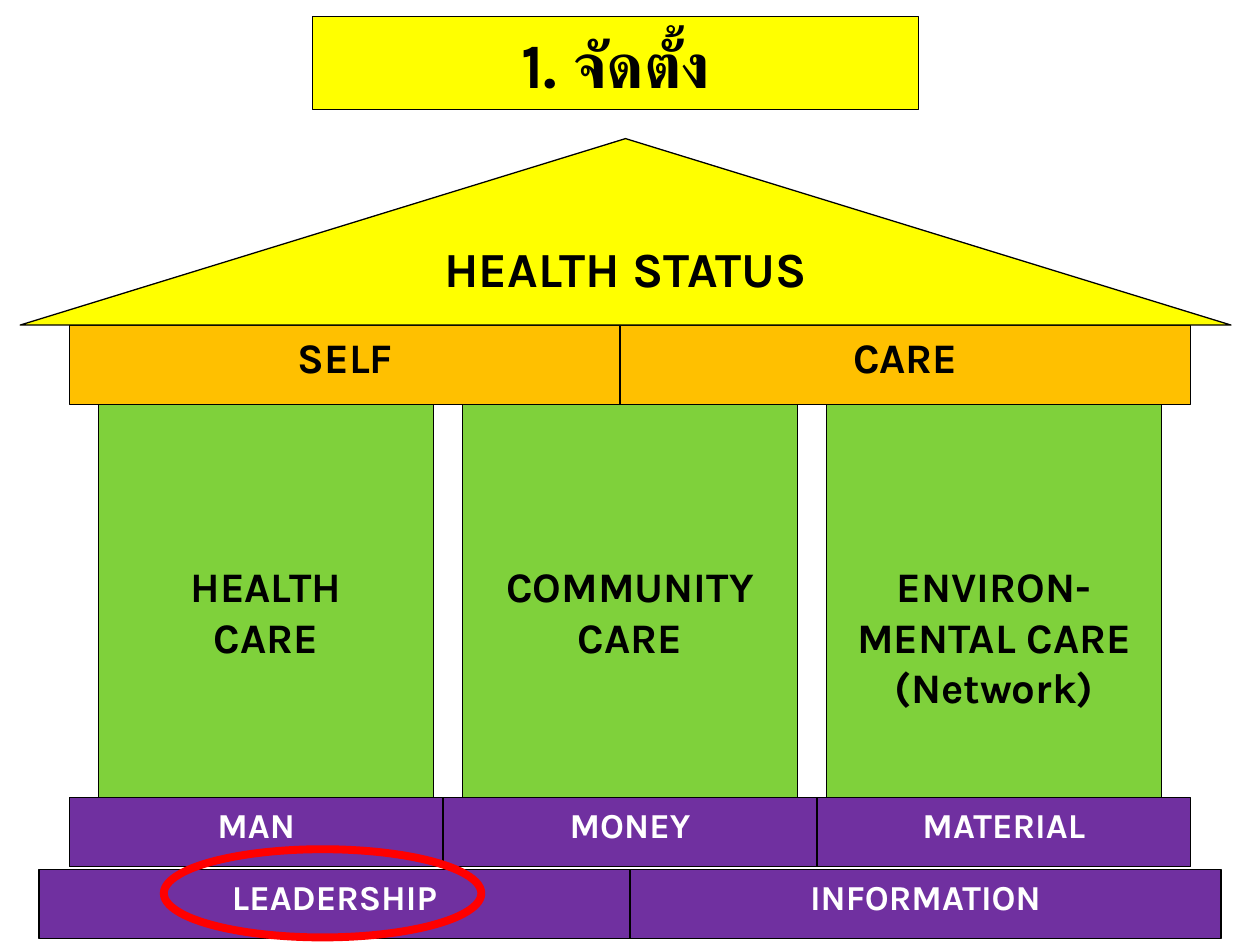
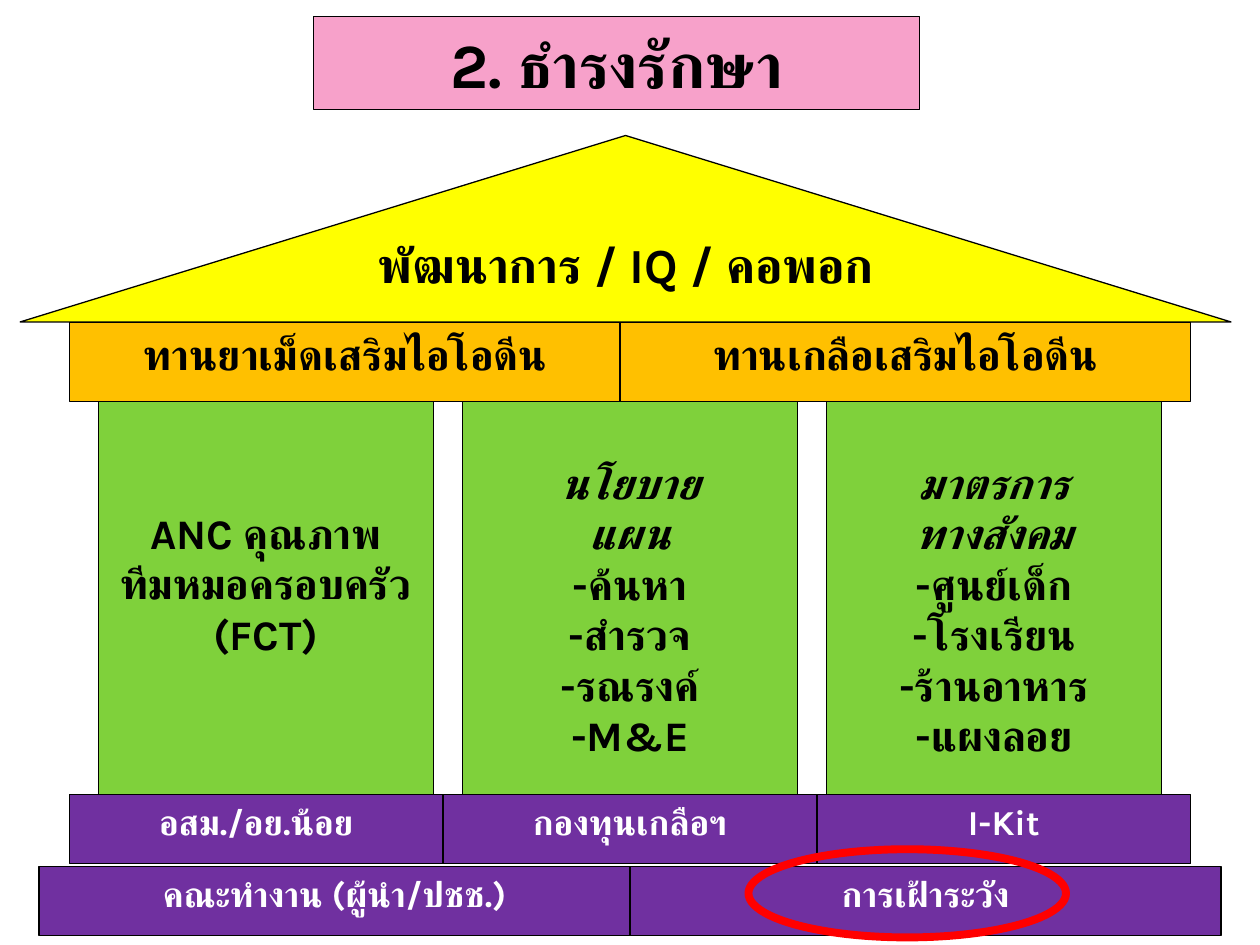
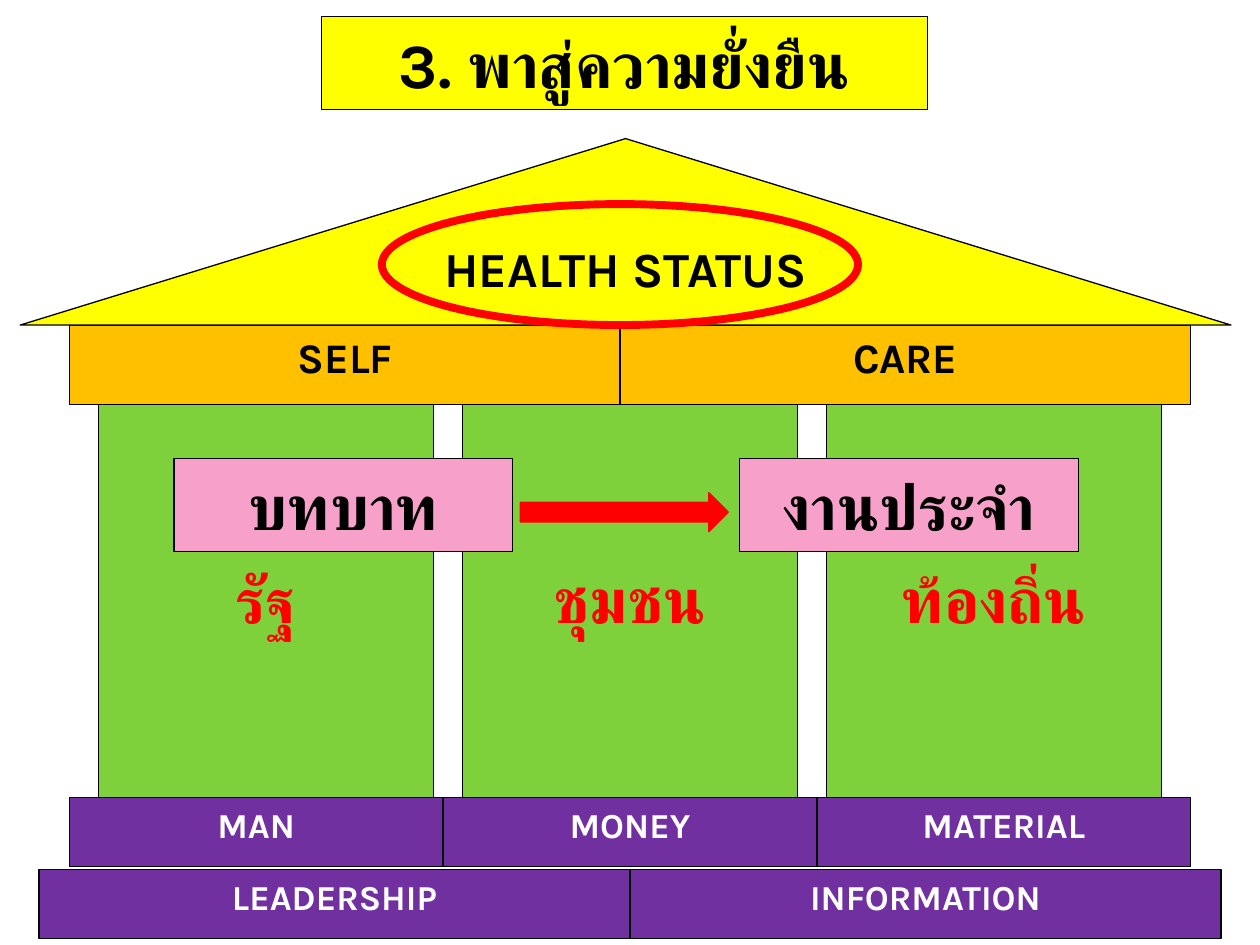
from lxml.etree import SubElement
from pptx import Presentation
from pptx.dml.color import RGBColor
from pptx.enum.shapes import MSO_SHAPE
from pptx.enum.text import MSO_ANCHOR, PP_ALIGN
from pptx.oxml.ns import qn
from pptx.util import Inches, Pt

BLACK = RGBColor(0x00, 0x00, 0x00)
WHITE = RGBColor(0xFF, 0xFF, 0xFF)
YELLOW = RGBColor(0xFF, 0xFF, 0x00)
AMBER = RGBColor(0xFF, 0xC0, 0x00)
GREEN = RGBColor(0x7F, 0xD1, 0x3B)
PURPLE = RGBColor(0x70, 0x30, 0xA0)
PINK = RGBColor(0xF7, 0xA1, 0xCA)
RED = RGBColor(0xFF, 0x00, 0x00)

FONT = "Karla"
LINE_HEIGHT = 1.19
COLUMNS, ROWS = 100, 75

ENGLISH_HOUSE = {
    "roof": "HEALTH STATUS",
    "beams": ["SELF", "CARE"],
    "base": ["MAN", "MONEY", "MATERIAL"],
    "ground": ["LEADERSHIP", "INFORMATION"],
}


class HouseDeck:
    """Draws on a grid of 100 columns by 75 rows."""

    def __init__(self):
        self.deck = Presentation()
        self.deck.slide_width, self.deck.slide_height = Inches(10), Inches(7.5)
        self.column = self.deck.slide_width / COLUMNS
        self.row = self.deck.slide_height / ROWS
        self.page = None

    def add_page(self):
        self.page = self.deck.slides.add_slide(self.deck.slide_layouts[6])

    def shape(self, kind, left, top, width, height, fill=None, line=BLACK, weight=0.75):
        box = self.page.shapes.add_shape(
            kind, round(left * self.column), round(top * self.row),
            round(width * self.column), round(height * self.row))
        box.shadow.inherit = False
        if fill is None:
            box.fill.background()
        else:
            box.fill.solid()
            box.fill.fore_color.rgb = fill
        box.line.color.rgb = line
        box.line.width = Pt(weight)
        return box

    def set_text(self, box, lines, size, color=BLACK, anchor=MSO_ANCHOR.TOP, skip=0, slanted=0):
        """Leave `skip` lines free at the top; set the first `slanted` lines in italics."""
        frame = box.text_frame
        frame.word_wrap = True
        frame.vertical_anchor = anchor
        frame.margin_top = Inches(0.05) + Pt(skip * size * LINE_HEIGHT)
        for index, line in enumerate(lines):
            para = frame.paragraphs[0] if index == 0 else frame.add_paragraph()
            para.text = line
            para.alignment = PP_ALIGN.CENTER
            font = para.font
            font.size, font.bold, font.italic = Pt(size), True, index < slanted
            font.color.rgb = color
            font.name = FONT
            SubElement(para._p.pPr.find(qn("a:defRPr")), qn("a:cs"), typeface=FONT)

    def block(self, left, top, width, height, fill, text, size, color=BLACK):
        box = self.shape(MSO_SHAPE.RECTANGLE, left, top, width, height, fill)
        self.set_text(box, [text], size, color)

    def label(self, left, top, width, fill, text):
        box = self.shape(MSO_SHAPE.RECTANGLE, left, top, width, 7.4, fill)
        self.set_text(box, [text], 36, anchor=MSO_ANCHOR.MIDDLE)

    def title(self, left, fill, text):
        self.label(left, 1.3, 48.1, fill, text)

    def ring(self, left, top, width=25.2, height=7):
        self.shape(MSO_SHAPE.OVAL, left, top, width, height, line=RED, weight=4.5)

    def house(self, roof, beams, base, ground, pillars, top=11, size=24, color=BLACK):
        """Each pillar is (lines skipped, italic lines, lines of text)."""
        for index, (skip, slanted, lines) in enumerate(pillars):
            pillar = self.shape(MSO_SHAPE.RECTANGLE, 7.8 + index * 28.9, top + 21.1,
                                26.6, 31.3, GREEN)
            self.set_text(pillar, lines, size, color, skip=skip, slanted=slanted)
        for left, width, text in zip((5.5, 49.2), (43.8, 45.3), beams):
            self.block(left, top + 14.8, width, 6.3, AMBER, text, 24)
        gable = self.shape(MSO_SHAPE.ISOSCELES_TRIANGLE, 1.6, top, 96.1, 14.8, YELLOW)
        self.set_text(gable, [roof], 28)
        for left, width, offset, texts in ((5.5, 29.67, 52.3, base), (3.1, 46.9, 58, ground)):
            for index, text in enumerate(texts):
                self.block(left + index * width, top + offset, width, 5.5,
                           PURPLE, text, 20, WHITE)


def establish(house_deck):
    house_deck.add_page()
    house_deck.house(**ENGLISH_HOUSE, pillars=[
        (3, 0, ["HEALTH", "CARE"]),
        (3, 0, ["COMMUNITY", "CARE"]),
        (3, 0, ["ENVIRON-", "MENTAL CARE", "(Network)"]),
    ])
    house_deck.title(24.8, YELLOW, "1. จัดตั้ง")
    house_deck.ring(13, 67.4)


def maintain(house_deck):
    house_deck.add_page()
    house_deck.house(
        roof="พัฒนาการ / IQ / คอพอก",
        beams=["ทานยาเม็ดเสริมไอโอดีน", "ทานเกลือเสริมไอโอดีน"],
        base=["อสม./อย.น้อย", "กองทุนเกลือฯ", "I-Kit"],
        ground=["คณะทำงาน (ผู้นำ/ปชช.)", "การเฝ้าระวัง"],
        pillars=[
            (2, 0, ["ANC คุณภาพ", "ทีมหมอครอบครัว", "(FCT)"]),
            (1, 2, ["นโยบาย", "แผน", "-ค้นหา", "-สำรวจ", "-รณรงค์", "-M&E"]),
            (1, 2, ["มาตรการ", "ทางสังคม", "-ศูนย์เด็ก", "-โรงเรียน",
                    "-ร้านอาหาร", "-แผงลอย"]),
        ],
        top=10.75)
    house_deck.title(24.9, PINK, "2. ธำรงรักษา")
    house_deck.ring(59.4, 67.4)


def sustain(house_deck):
    house_deck.add_page()
    house_deck.house(**ENGLISH_HOUSE, size=36, color=RED,
                     pillars=[(2, 0, [word]) for word in ("รัฐ", "ชุมชน", "ท้องถิ่น")])
    house_deck.title(25.5, YELLOW, "3. พาสู่ความยั่งยืน")
    for left, text in ((13.8, "บทบาท"), (58.7, "งานประจำ")):
        house_deck.label(left, 36.4, 26.9, PINK, text)
    house_deck.shape(MSO_SHAPE.RIGHT_ARROW, 41.3, 39.1, 16.5, 3.1, RED, RED)
    house_deck.ring(30.3, 16.2, 37.8, 9.6)


def main():
    house_deck = HouseDeck()
    for build in (establish, maintain, sustain):
        build(house_deck)
    house_deck.deck.save("out.pptx")


if __name__ == "__main__":
    main()
